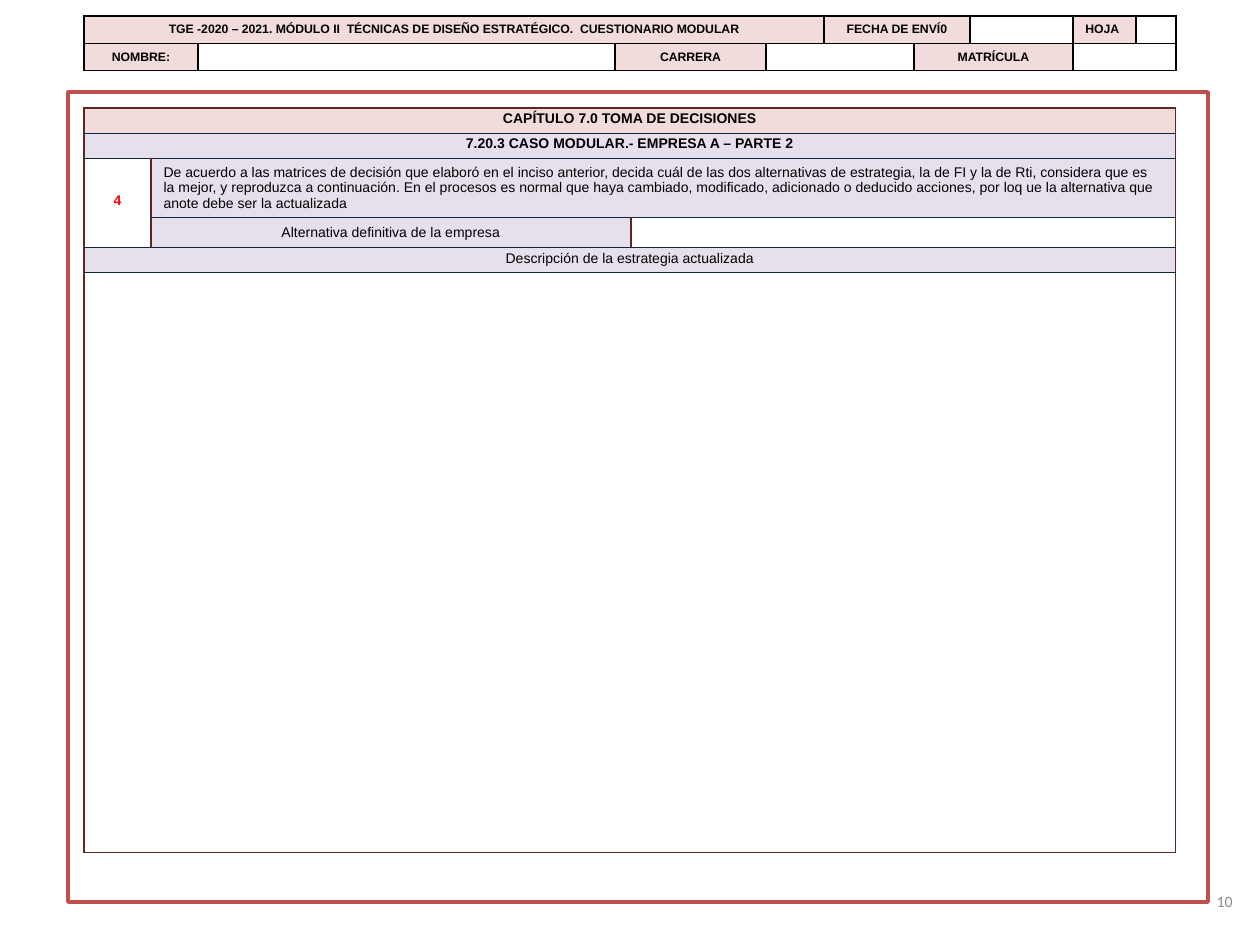
from dataclasses import dataclass

from lxml import etree
from pptx import Presentation
from pptx.dml.color import RGBColor
from pptx.enum.shapes import MSO_SHAPE
from pptx.enum.text import MSO_ANCHOR, PP_ALIGN
from pptx.oxml.ns import qn
from pptx.util import Emu, Pt

PX_PER_INCH = 126
LEFT, CENTER, RIGHT = PP_ALIGN.LEFT, PP_ALIGN.CENTER, PP_ALIGN.RIGHT
MIDDLE = MSO_ANCHOR.MIDDLE
RECTANGLE = MSO_SHAPE.RECTANGLE

BLACK = RGBColor(0x00, 0x00, 0x00)
WHITE = RGBColor(0xFF, 0xFF, 0xFF)
RED = RGBColor(0xFF, 0x00, 0x00)
GRAY = RGBColor(0x8C, 0x8C, 0x8C)
PINK = RGBColor(0xF2, 0xDC, 0xDB)
LILAC = RGBColor(0xE6, 0xE0, 0xEC)
MAROON = RGBColor(0x63, 0x25, 0x23)
NAVY = RGBColor(0x10, 0x25, 0x3F)
FRAME_RED = RGBColor(0xC0, 0x50, 0x4D)


@dataclass(frozen=True)
class Border:
    color: RGBColor
    width: float


@dataclass(frozen=True)
class Cell:
    row: int
    col: int
    text: str = ""
    fill: RGBColor = WHITE
    rows: int = 1
    cols: int = 1
    color: RGBColor = BLACK
    bold: bool = False
    align: PP_ALIGN = CENTER
    line_pt: int | None = None


@dataclass(frozen=True)
class Grid:
    left: int
    top: int
    widths: list[int]
    heights: list[int]
    font_pt: int
    side: Border
    inner: Border
    outer: Border
    cells: list[Cell]


BLACK_LINE = Border(BLACK, 1)
MAROON_LINE = Border(MAROON, 0.75)
NAVY_LINE = Border(NAVY, 0.5)

QUESTION = (
    "De acuerdo a las matrices de decisión que elaboró en el inciso anterior, decida cuál de "
    "las dos alternativas de estrategia, la de FI y la de Rti, considera que es la mejor, y "
    "reproduzca a continuación. En el procesos es normal que haya cambiado, modificado, "
    "adicionado o deducido acciones, por loq ue la alternativa que anote debe ser la actualizada"
)

CASE = Grid(
    84, 108, [67, 480, 545], [25, 25, 60, 29, 25, 580], 8, MAROON_LINE, NAVY_LINE, MAROON_LINE,
    [
        Cell(0, 0, "CAPÍTULO 7.0 TOMA DE DECISIONES", PINK, cols=3, bold=True, line_pt=7),
        Cell(1, 0, "7.20.3 CASO MODULAR.- EMPRESA A – PARTE 2", LILAC, cols=3, bold=True, line_pt=7),
        Cell(2, 0, "4", rows=2, color=RED, bold=True, line_pt=7),
        Cell(2, 1, QUESTION, LILAC, cols=2, align=LEFT),
        Cell(3, 1, "Alternativa definitiva de la empresa", LILAC),
        Cell(3, 2),
        Cell(4, 0, "Descripción de la estrategia actualizada", LILAC, cols=3, line_pt=7),
        Cell(5, 0, cols=3),
    ],
)

HEADER = Grid(
    84, 16, [114, 417, 151, 58, 90, 56, 103, 63, 40], [26, 26], 7,
    BLACK_LINE, BLACK_LINE, BLACK_LINE,
    [
        Cell(0, 0, "TGE -2020 – 2021. MÓDULO II  TÉCNICAS DE DISEÑO ESTRATÉGICO.  CUESTIONARIO MODULAR",
             PINK, cols=4, bold=True),
        Cell(0, 4, "FECHA DE ENVÍ0", PINK, cols=2, bold=True),
        Cell(0, 6),
        Cell(0, 7, "HOJA", PINK, bold=True, align=LEFT),
        Cell(0, 8),
        Cell(1, 0, "NOMBRE:", PINK, bold=True),
        Cell(1, 1),
        Cell(1, 2, "CARRERA", PINK, bold=True),
        Cell(1, 3, cols=2),
        Cell(1, 5, "MATRÍCULA", PINK, cols=2, bold=True),
        Cell(1, 7, cols=2),
    ],
)


def px(n: int) -> Emu:
    return Emu(round(n * 914400 / PX_PER_INCH))


def set_borders(cell, borders: dict[str, Border]) -> None:
    tc_pr = cell._tc.get_or_add_tcPr()
    for tag, border in borders.items():
        ln = etree.SubElement(tc_pr, qn(f"a:{tag}"), w=str(Pt(border.width)))
        fill = etree.SubElement(ln, qn("a:solidFill"))
        etree.SubElement(fill, qn("a:srgbClr"), val=str(border.color))


def style_text(p, size: int, font: str, color: RGBColor, bold: bool = False) -> None:
    for r in p.runs:
        r.font.size = Pt(size)
        r.font.name = font
        r.font.bold = bold
        r.font.color.rgb = color


def fill_cell(table, item: Cell, font_pt: int) -> None:
    cell = table.cell(item.row, item.col)
    if item.rows > 1 or item.cols > 1:
        cell.merge(table.cell(item.row + item.rows - 1, item.col + item.cols - 1))
    cell.fill.solid()
    cell.fill.fore_color.rgb = item.fill
    cell.vertical_anchor = MIDDLE
    p = cell.text_frame.paragraphs[0]
    if not item.text:
        # An empty cell needs a small end mark, or its row grows
        etree.SubElement(p._p, qn("a:endParaRPr"), sz=str(font_pt * 100))
        return
    p.text = item.text
    p.alignment = item.align
    if item.line_pt:
        p.line_spacing = Pt(item.line_pt)
    style_text(p, font_pt, "Arial", item.color, item.bold)


def add_grid(slide, grid: Grid) -> None:
    n_rows, n_cols = len(grid.heights), len(grid.widths)
    table = slide.shapes.add_table(
        n_rows, n_cols, px(grid.left), px(grid.top), px(sum(grid.widths)), px(sum(grid.heights))
    ).table
    table.first_row = False
    table.horz_banding = False
    for column, width in zip(table.columns, grid.widths):
        column.width = px(width)
    for i, (row, height) in enumerate(zip(table.rows, grid.heights)):
        row.height = px(height)
        top = grid.outer if i == 0 else grid.inner
        bottom = grid.outer if i == n_rows - 1 else grid.inner
        for cell in row.cells:
            set_borders(cell, {"lnL": grid.side, "lnR": grid.side, "lnT": top, "lnB": bottom})
    for item in grid.cells:
        fill_cell(table, item, grid.font_pt)


def add_frame(slide) -> None:
    s = slide.shapes.add_shape(RECTANGLE, px(68), px(92), px(1140), px(810))
    s.shadow.inherit = False
    s.fill.background()
    s.line.color.rgb = FRAME_RED
    s.line.width = Pt(2)


def add_page_number(slide) -> None:
    tf = slide.shapes.add_textbox(px(951), px(876), px(294), px(50)).text_frame
    tf.word_wrap = True
    tf.vertical_anchor = MIDDLE
    p = tf.paragraphs[0]
    p.text = "10"
    p.alignment = RIGHT
    style_text(p, 9, "Calibri", GRAY)


def main() -> None:
    prs = Presentation()
    prs.slide_width, prs.slide_height = px(1260), px(945)
    slide = prs.slides.add_slide(prs.slide_layouts[6])
    add_grid(slide, CASE)
    add_frame(slide)
    add_page_number(slide)
    add_grid(slide, HEADER)
    prs.save("out.pptx")


if __name__ == "__main__":
    main()
